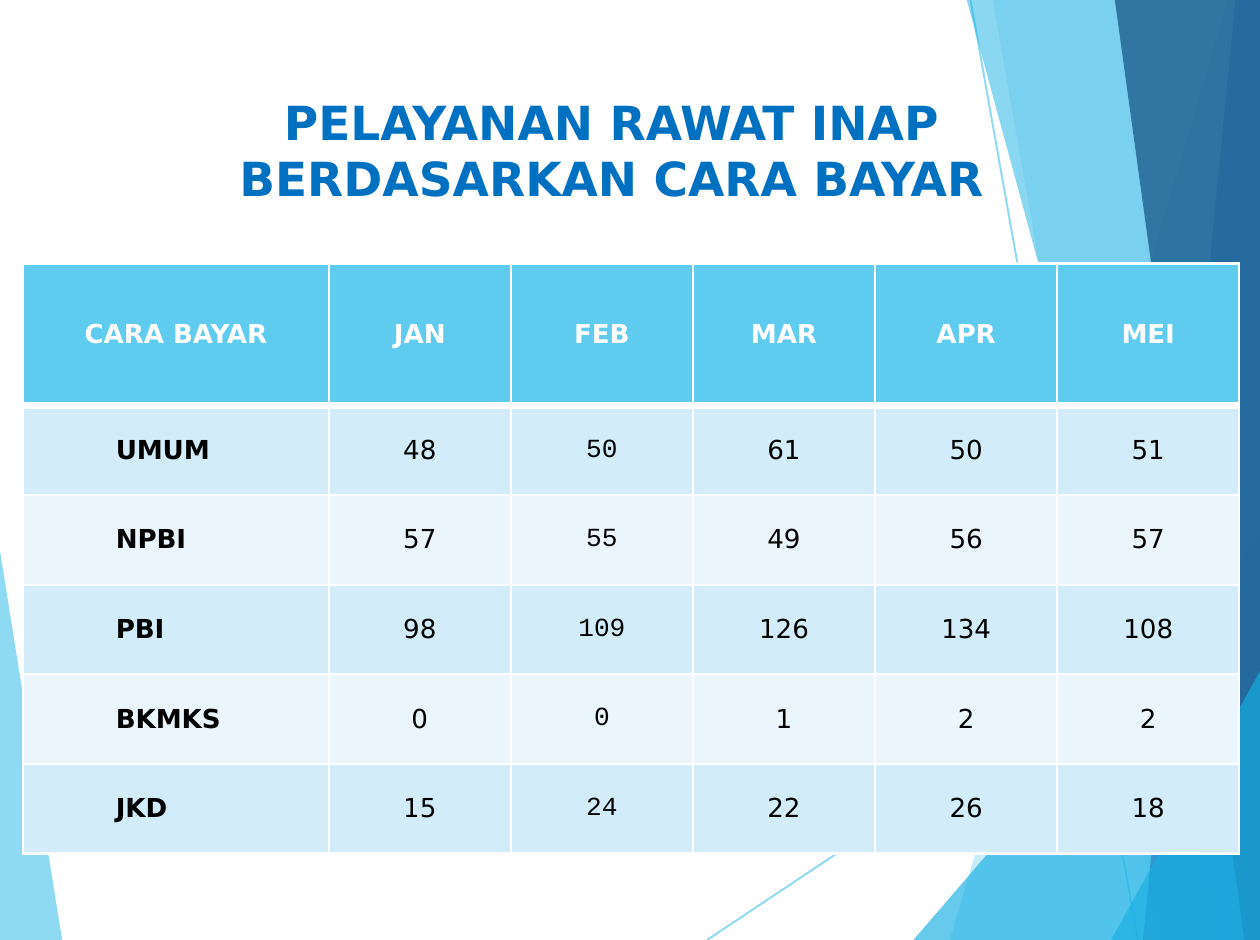
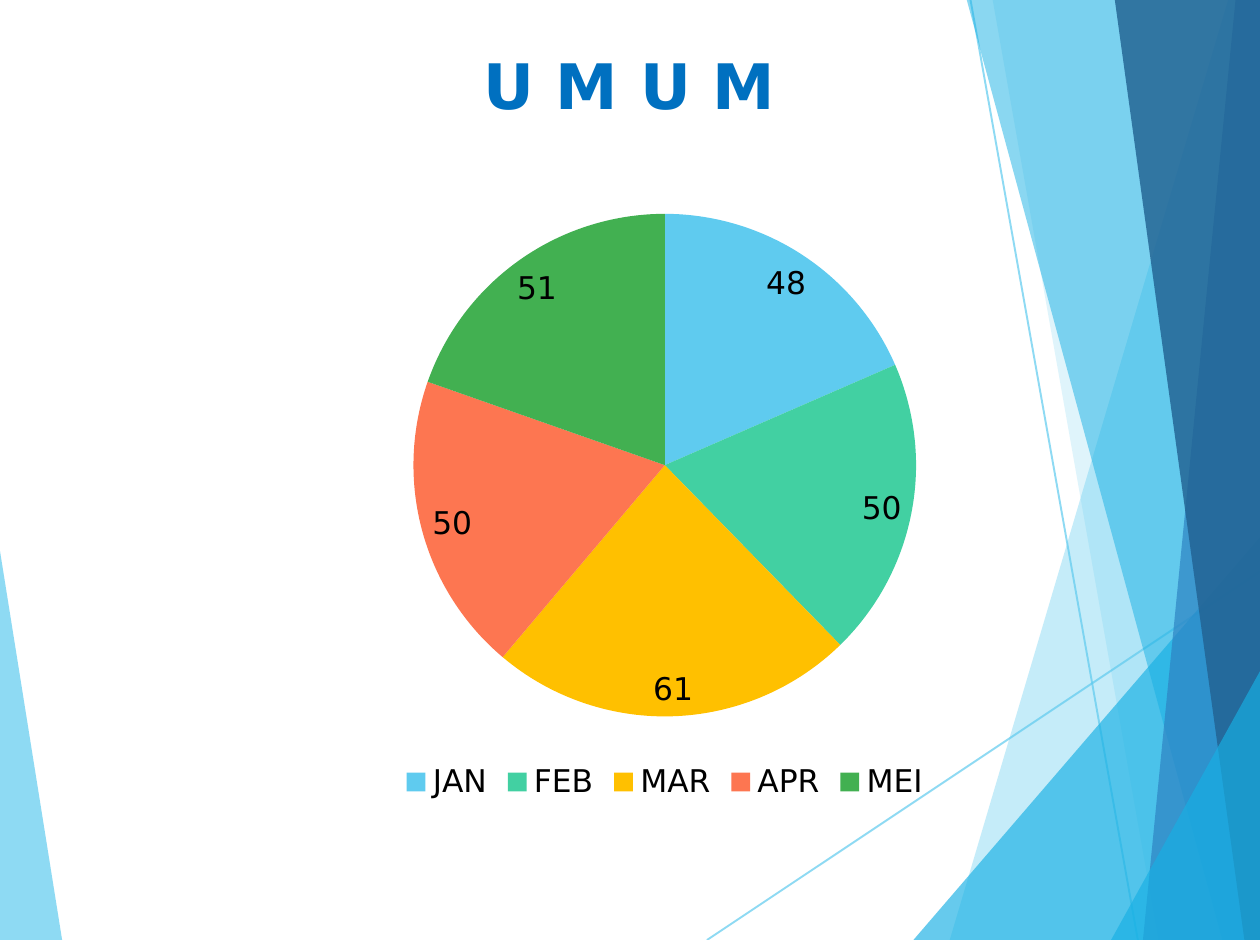
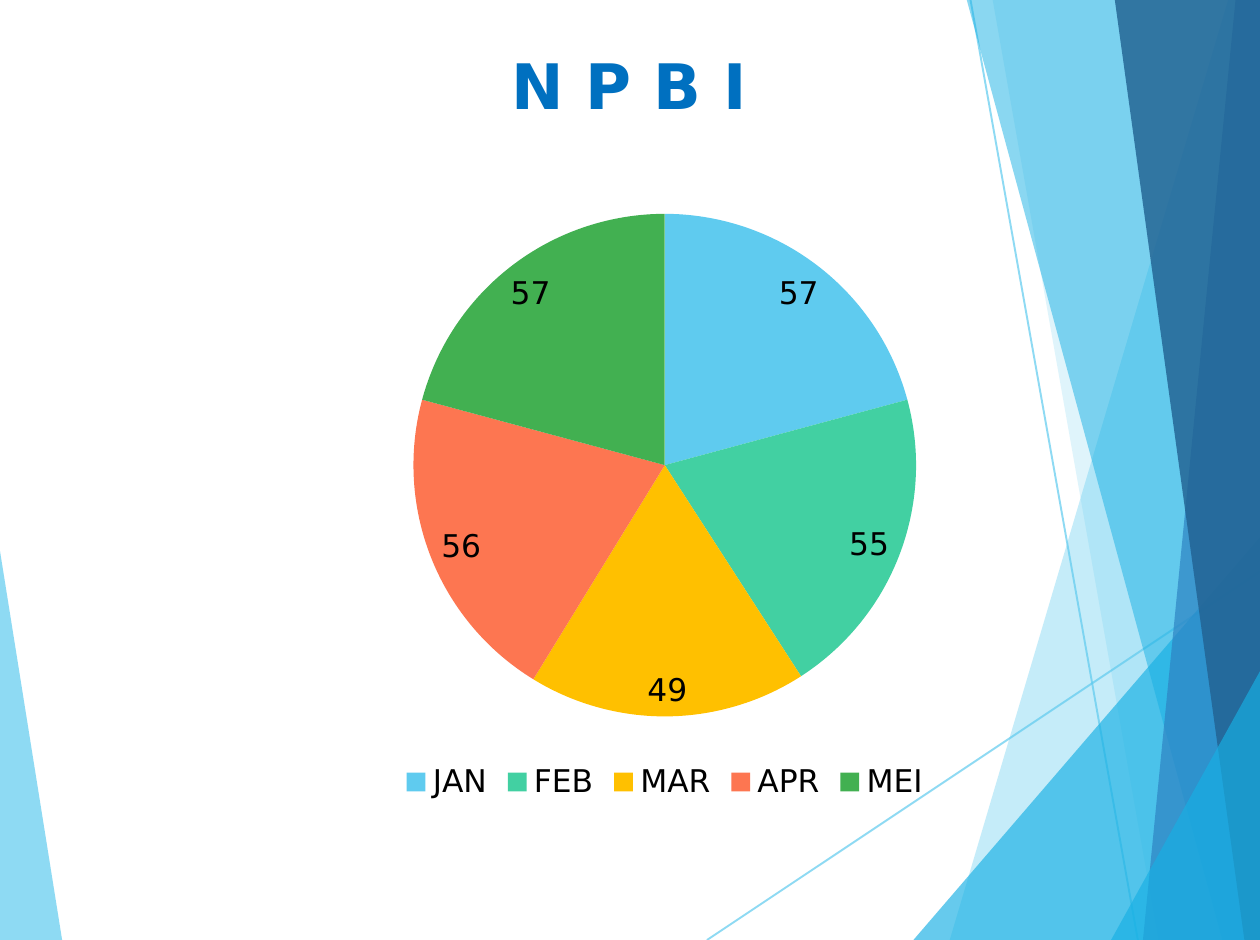
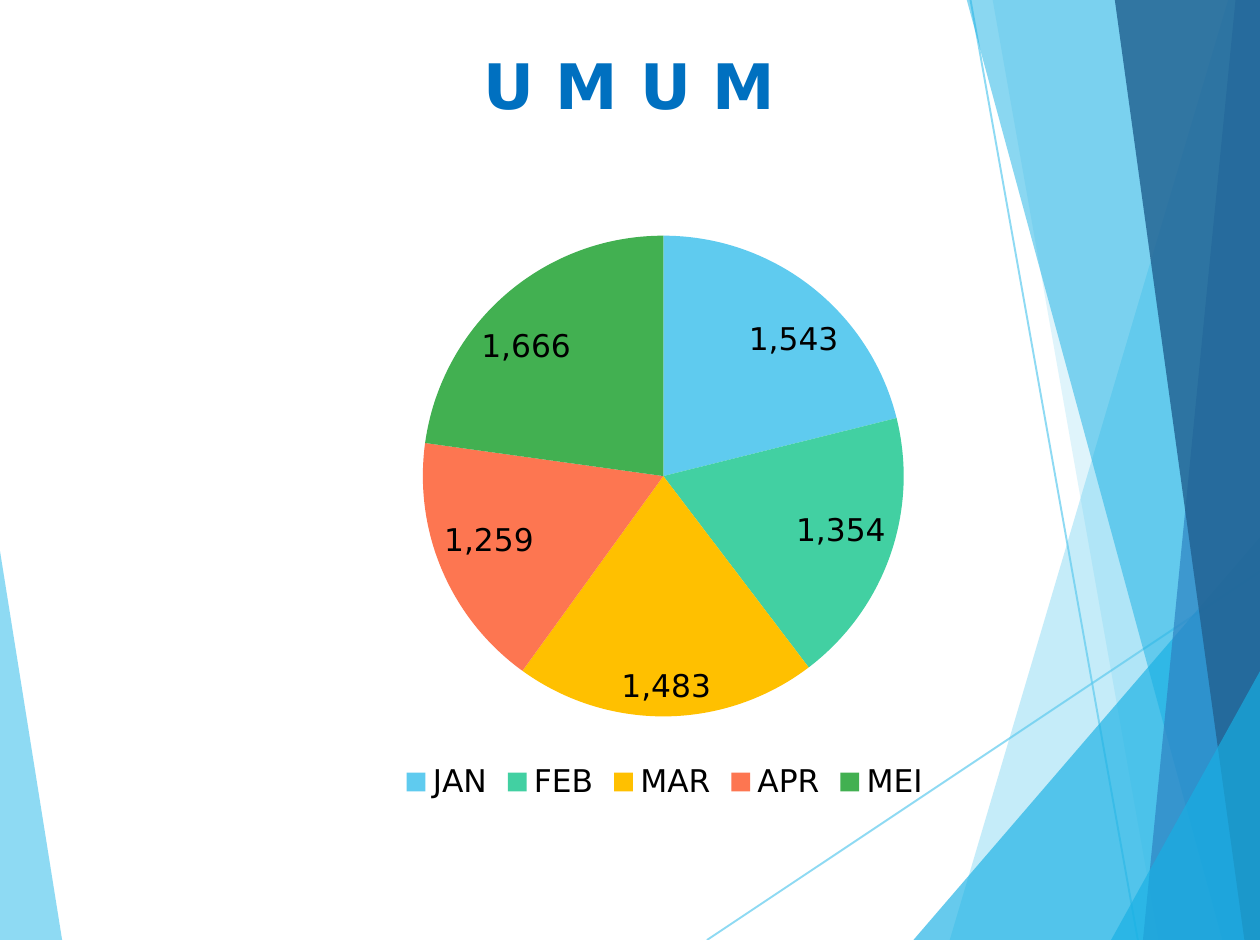
from dataclasses import dataclass
from typing import Any, NamedTuple

from lxml.etree import SubElement
from pptx import Presentation
from pptx.chart.data import CategoryChartData
from pptx.dml.color import RGBColor
from pptx.enum.chart import XL_CHART_TYPE, XL_LABEL_POSITION, XL_LEGEND_POSITION
from pptx.enum.shapes import MSO_CONNECTOR
from pptx.enum.text import MSO_ANCHOR, PP_ALIGN
from pptx.oxml.ns import qn
from pptx.slide import Slide
from pptx.util import Cm, Pt

# Colours and fonts
WHITE = RGBColor(0xFF, 0xFF, 0xFF)
BLACK = RGBColor(0x00, 0x00, 0x00)
TITLE = RGBColor(0x00, 0x70, 0xC0)
SKY = RGBColor(0x5F, 0xCB, 0xEF)
CYAN = RGBColor(0x17, 0xB0, 0xE4)
BLUE = RGBColor(0x2E, 0x83, 0xC3)
NAVY = RGBColor(0x22, 0x62, 0x92)
BANDS = (RGBColor(0xD2, 0xEC, 0xF9), RGBColor(0xEA, 0xF6, 0xFC))
SLICES = (SKY, RGBColor(0x42, 0xD0, 0xA2), RGBColor(0xFF, 0xC0, 0x00),
          RGBColor(0xFD, 0x76, 0x51), RGBColor(0x42, 0xB0, 0x51))
SANS = "DejaVu Sans"
MONO = "Courier New"
WIDE, HIGH = 17.02, 12.7

# Formats
HEAD = {"name": SANS, "size": Pt(18), "bold": True}
LARGE = {**HEAD, "size": Pt(24)}
CELL = {"name": SANS, "size": Pt(10), "bold": False}
LABEL = {"name": SANS, "size": Pt(12)}
BASE = {"name": "Cabin", "size": Pt(18)}
TIGHT = {f"margin_{side}": 0 for side in ("left", "right", "top", "bottom")}

# Data
MONTHS = ("JAN", "FEB", "MAR", "APR", "MEI")
COUNTS = {
    "UMUM": (48, 50, 61, 50, 51),
    "NPBI": (57, 55, 49, 56, 57),
    "PBI": (98, 109, 126, 134, 108),
    "BKMKS": (0, 0, 1, 2, 2),
    "JKD": (15, 24, 22, 26, 18),
}


class Facet(NamedTuple):
    color: RGBColor
    alpha: int
    points: tuple[tuple[float, float], ...]


class Ray(NamedTuple):
    start: tuple[float, float]
    end: tuple[float, float]


@dataclass
class Pie:
    title: str
    values: tuple[int, ...]
    form: str = "General"


RAYS = (
    Ray((9.55, HIGH), (WIDE, 7.72)),
    Ray((13.11, 0), (15.37, HIGH)),
)
LEFT = Facet(SKY, 70, ((0, 7.44), (0.84, HIGH), (0, HIGH)))


def right(color: RGBColor, alpha: int, top: float, foot: float, peak: float = 0) -> Facet:
    """A facet that runs to the right edge of the slide."""
    first = (WIDE if peak else top, peak)
    return Facet(color, alpha, (first, (foot, HIGH), (WIDE, HIGH), (WIDE, peak)))


FACETS = (
    right(SKY, 36, 16.59, 12.83),
    right(SKY, 20, 13.41, 15.65),
    right(CYAN, 66, WIDE, 12.34, 7.26),
    right(CYAN, 50, 13.06, 16.51),
    right(BLUE, 70, 16.69, 15.44),
    right(NAVY, 82, 15.06, 16.81),
    right(CYAN, 66, WIDE, 15.01, 9.07),
)
PIES = (
    Pie("U M U M", COUNTS["UMUM"]),
    Pie("N P B I", COUNTS["NPBI"]),
    Pie("U M U M", (1543, 1354, 1483, 1259, 1666), "#,##0"),
)


def apply(item: Any, form: dict[str, Any]) -> None:
    for key, value in form.items():
        setattr(item, key, value)


def ink(font: Any, form: dict[str, Any], color: RGBColor) -> None:
    apply(font, form)
    font.color.rgb = color


def fade(shape: Any, alpha: int) -> None:
    for node in shape._element.iter(qn("a:srgbClr")):
        SubElement(node, qn("a:alpha"), val=str(alpha * 1000))


def facet(slide: Slide, item: Facet) -> None:
    spots = [(Cm(x), Cm(y)) for x, y in item.points]
    pen = slide.shapes.build_freeform(*spots[0])
    pen.add_line_segments(spots[1:], close=True)
    shape = pen.convert_to_shape()
    shape.shadow.inherit = False
    shape.fill.solid()
    shape.fill.fore_color.rgb = item.color
    shape.line.fill.background()
    fade(shape, item.alpha)


def ray(slide: Slide, item: Ray) -> None:
    ends = [Cm(value) for value in item.start + item.end]
    line = slide.shapes.add_connector(MSO_CONNECTOR.STRAIGHT, *ends)
    line.line.color.rgb = SKY
    line.line.width = Pt(0.75)
    SubElement(line._element.spPr, qn("a:effectLst"))
    fade(line, 70)


def title(slide: Slide, lines: tuple[str, ...], left: float, top: float,
          form: dict[str, Any]) -> None:
    box = slide.shapes.add_textbox(Cm(left), Cm(top), Cm(15.32), Cm(2.11))
    box.text_frame.word_wrap = True
    para = box.text_frame.paragraphs[0]
    para.alignment = PP_ALIGN.CENTER
    for i, text in enumerate(lines):
        if i:
            para.add_line_break()
        run = para.add_run()
        run.text = text
        ink(run.font, form, TITLE)


def border(cell: Any, head: bool) -> None:
    props = cell._tc.get_or_add_tcPr()
    widths = {"lnL": 1, "lnR": 1, "lnT": 1, "lnB": 3 if head else 1}
    for i, (tag, width) in enumerate(widths.items()):
        edge = SubElement(props, qn(f"a:{tag}"), w=str(Pt(width)))
        fill = SubElement(edge, qn("a:solidFill"))
        SubElement(fill, qn("a:srgbClr"), val=str(WHITE))
        props.insert(i, edge)


def grid(slide: Slide) -> None:
    rows = [("CARA BAYAR", *MONTHS)] + [(name, *vals) for name, vals in COUNTS.items()]
    frame = slide.shapes.add_table(len(rows), len(rows[0]), Cm(0.31), Cm(3.56),
                                   Cm(16.43), Cm(7.97))
    table = frame.table
    for c, col in enumerate(table.columns):
        col.width = Cm(2.46 if c else 4.13)
    for r, row in enumerate(rows):
        table.rows[r].height = Cm(1.21 if r else 1.92)
        for c, value in enumerate(row):
            cell = table.cell(r, c)
            cell.text = str(value)
            cell.vertical_anchor = MSO_ANCHOR.MIDDLE
            cell.fill.solid()
            cell.fill.fore_color.rgb = BANDS[(r - 1) % 2] if r else SKY
            border(cell, r == 0)
            para = cell.text_frame.paragraphs[0]
            if r and c == 0:
                para._p.get_or_add_pPr().set("marL", str(Cm(1)))
            else:
                para.alignment = PP_ALIGN.CENTER
            if r and c > 1:
                apply(cell, TIGHT)
            form = {**CELL, "bold": r == 0 or c == 0,
                    "name": MONO if r and c == 2 else SANS}
            ink(para.runs[0].font, form, BLACK if r else WHITE)


def chart(slide: Slide, pie: Pie) -> None:
    data = CategoryChartData(number_format=pie.form)
    data.categories = MONTHS
    data.add_series("Series 1", pie.values)
    plate = slide.shapes.add_chart(XL_CHART_TYPE.PIE, Cm(1.32), Cm(2.54),
                                   Cm(15.32), Cm(8.38), data).chart
    apply(plate, {"has_title": False, "has_legend": True})
    ink(plate.font, BASE, BLACK)
    apply(plate.legend, {"position": XL_LEGEND_POSITION.BOTTOM,
                         "include_in_layout": False})
    ink(plate.legend.font, LABEL, BLACK)
    plot = plate.plots[0]
    plot.vary_by_categories = True
    for i, color in enumerate(SLICES):
        fill = plot.series[0].points[i].format.fill
        fill.solid()
        fill.fore_color.rgb = color
    labels = plot.series[0].data_labels
    apply(labels, {"show_value": True, "number_format": pie.form,
                   "number_format_is_linked": False,
                   "position": XL_LABEL_POSITION.BEST_FIT})
    ink(labels.font, LABEL, BLACK)


def main() -> None:
    deck = Presentation()
    apply(deck, {"slide_width": Cm(WIDE), "slide_height": Cm(HIGH)})

    def page() -> Slide:
        slide = deck.slides.add_slide(deck.slide_layouts[6])
        facet(slide, LEFT)
        for item in RAYS:
            ray(slide, item)
        for item in FACETS:
            facet(slide, item)
        return slide

    # Table of all payment types
    slide = page()
    title(slide, ("PELAYANAN RAWAT INAP ", "BERDASARKAN CARA BAYAR "), 0.71, 1.14, HEAD)
    grid(slide)

    # One pie per payment type
    for pie in PIES:
        slide = page()
        title(slide, (pie.title,), 0.84, 0.51, LARGE)
        chart(slide, pie)

    deck.save("out.pptx")


if __name__ == "__main__":
    main()
